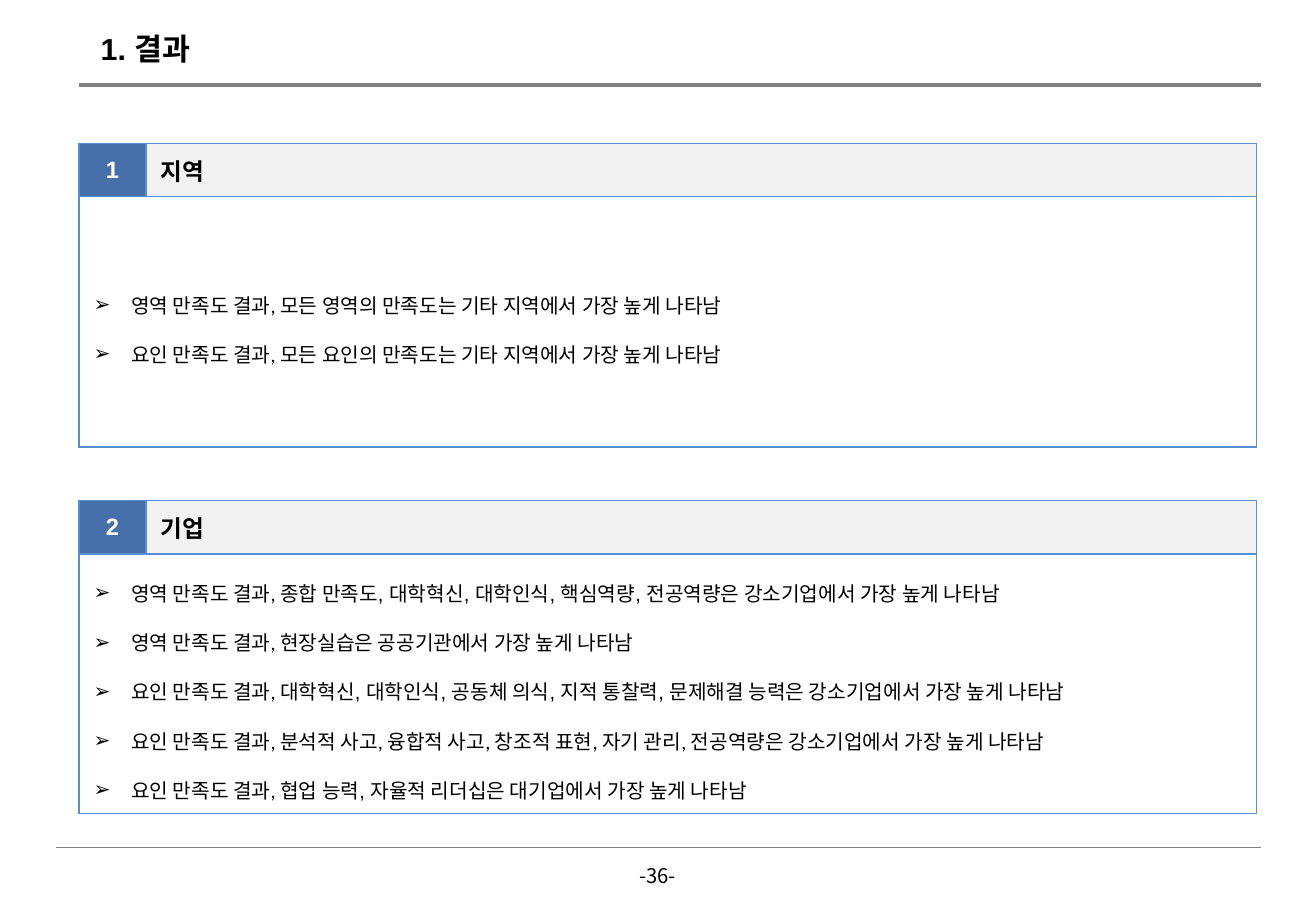
from dataclasses import dataclass

from lxml import etree
from pptx import Presentation, util as u
from pptx.dml.color import RGBColor
from pptx.enum import shapes, text
from pptx.oxml import ns

PX = 9144


@dataclass(frozen=True)
class Theme:
    ink: str = "000000"
    paper: str = "FFFFFF"
    rule: str = "808080"
    edge: str = "558ED5"
    badge: str = "476FAA"
    band: str = "F2F2F2"
    title: int = 18
    head: int = 14
    body: int = 12
    latin: str = "Arial"
    lead: str = "Calibri"
    korean: str = "Noto Sans CJK KR"


T = Theme()

REGION = [
    [("영역 만족도 결과, 모든 영역의 만족도는 기타 지역에서 가장 높게 나타남", T.lead)],
    [("요인 만족도 결과, 모든 요인의 만족도는 기타 지역에서 가장 높게 나타남", T.lead)],
]
FIRM = [
    [("영역 만족도 결과, ", T.lead),
     ("종합 만족도, 대학혁신, 대학인식, 핵심역량, 전공역량은 강소기업에서 가장 높게 나타남", T.latin)],
    [("영역 만족도 결과, ", T.lead),
     ("현장실습은 공공기관에서 가장 높게 나타남", T.latin)],
    [("요인 만족도 결과, ", T.lead),
     ("대학혁신, 대학인식, 공동체 의식, 지적 통찰력, 문제해결 능력은 강소기업에서 가장 높게 나타남", T.latin)],
    [("요인 만족도 결과, 분석적 사고, 융합적 사고, 창조적 표현, 자기 관리, 전공역량은 강소기업에서 가장 높게 나타남", T.lead)],
    [("요인 만족도 결과, ", T.lead),
     ("협업 능력, 자율적 리더십은 대기업에서 가장 높게 나타남", T.latin)],
]


def px(*vals):
    return [u.Emu(v * PX) for v in vals]


def add(parent, tag, **attrs):
    return etree.SubElement(parent, ns.qn(tag), attrs)


def put_run(para, words, size, face=T.latin, color=T.ink, bold=False):
    run = para.add_run()
    run.text = words
    font = run.font
    font.size, font.bold, font.name = u.Pt(size), bold, face
    font.color.rgb = RGBColor.from_string(color)
    add(run._r.get_or_add_rPr(), "a:ea", typeface=T.korean)


def add_rule(slide, left, right, y, width):
    line = slide.shapes.add_connector(
        shapes.MSO_CONNECTOR.STRAIGHT, *px(left, y, right, y))
    line.line.color.rgb = RGBColor.from_string(T.rule)
    line.line.width = u.Pt(width)
    add(line._element.spPr, "a:effectLst")


def add_label(slide, box, words, size, face, bold=False, align=None):
    frame = slide.shapes.add_textbox(*px(*box)).text_frame
    frame.word_wrap = False
    frame.auto_size = text.MSO_AUTO_SIZE.SHAPE_TO_FIT_TEXT
    para = frame.paragraphs[0]
    para.alignment = align
    put_run(para, words, size, face, bold=bold)


def style_cell(cell, fill):
    cell.vertical_anchor = text.MSO_ANCHOR.MIDDLE
    cell.margin_left, cell.margin_top = px(12, 8)
    cell.margin_right, cell.margin_bottom = px(12, 8)
    cell.fill.solid()
    cell.fill.fore_color.rgb = RGBColor.from_string(fill)
    props = cell._tc.get_or_add_tcPr()
    for spot, side in enumerate("LRTB"):
        line = add(props, f"a:ln{side}", w=str(u.Pt(1)))
        add(add(line, "a:solidFill"), "a:srgbClr", val=T.edge)
        props.insert(spot, line)


def add_point(frame, index, runs):
    para = frame.add_paragraph() if index else frame.paragraphs[0]
    para.line_spacing = 1.5
    if index:
        para.space_before = u.Pt(3)
    props = para._p.get_or_add_pPr()
    props.set("marL", str(31 * PX))
    props.set("indent", str(-31 * PX))
    add(props, "a:buFont", typeface=T.latin)
    add(props, "a:buChar", char="➢")
    for words, face in runs:
        put_run(para, words, T.body, face)


def add_panel(slide, top, rows, number, name, points):
    table = slide.shapes.add_table(2, 2, *px(65, top, 969, sum(rows))).table
    table.first_row = table.horz_banding = False
    for col, width in zip(table.columns, px(55, 914)):
        col.width = width
    for row, height in zip(table.rows, px(*rows)):
        row.height = height
    badge, head, body, rest = table.iter_cells()
    body.merge(rest)
    for cell, fill in zip((badge, head, body, rest),
                          (T.badge, T.band, T.paper, T.paper)):
        style_cell(cell, fill)
    para = badge.text_frame.paragraphs[0]
    para.alignment = text.PP_ALIGN.CENTER
    put_run(para, number, T.head, color=T.paper, bold=True)
    put_run(head.text_frame.paragraphs[0], name, T.head, bold=True)
    for index, runs in enumerate(points):
        add_point(body.text_frame, index, runs)


def main():
    deck = Presentation()
    deck.slide_width, deck.slide_height = px(1083, 750)
    slide = deck.slides.add_slide(deck.slide_layouts[6])
    add_rule(slide, 65, 1038, 70, 2)
    add_rule(slide, 46, 1038, 698, 0.5)
    add_label(slide, (73, 20, 101, 40), "1. 결과", T.title, T.latin, bold=True)
    add_label(slide, (515, 706, 52, 30), "-36-", T.body, T.korean,
              align=text.PP_ALIGN.CENTER)
    add_panel(slide, 118, (44, 206), "1", "지역", REGION)
    add_panel(slide, 412, (44, 214), "2", "기업", FIRM)
    deck.save("out.pptx")


if __name__ == "__main__":
    main()
